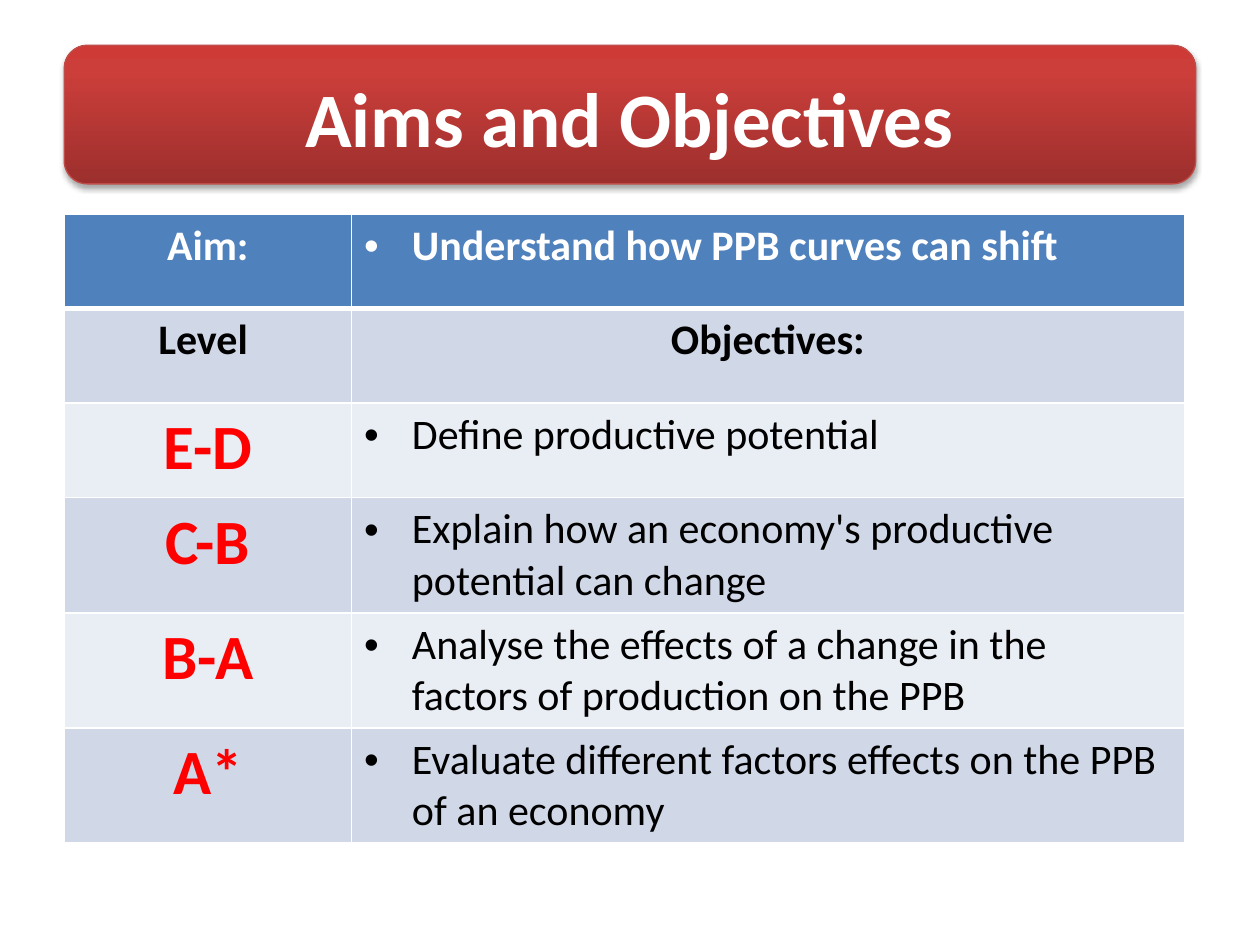
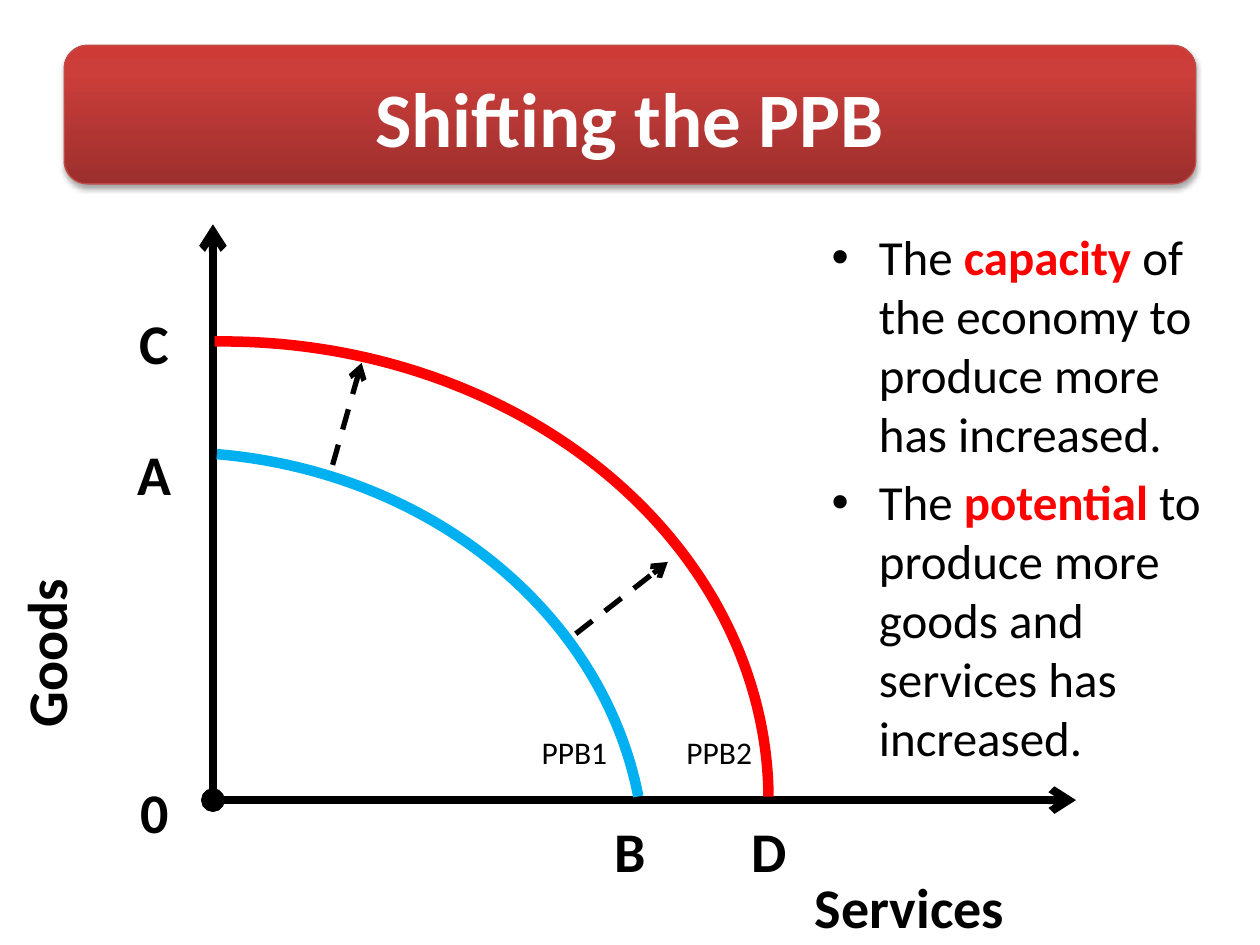
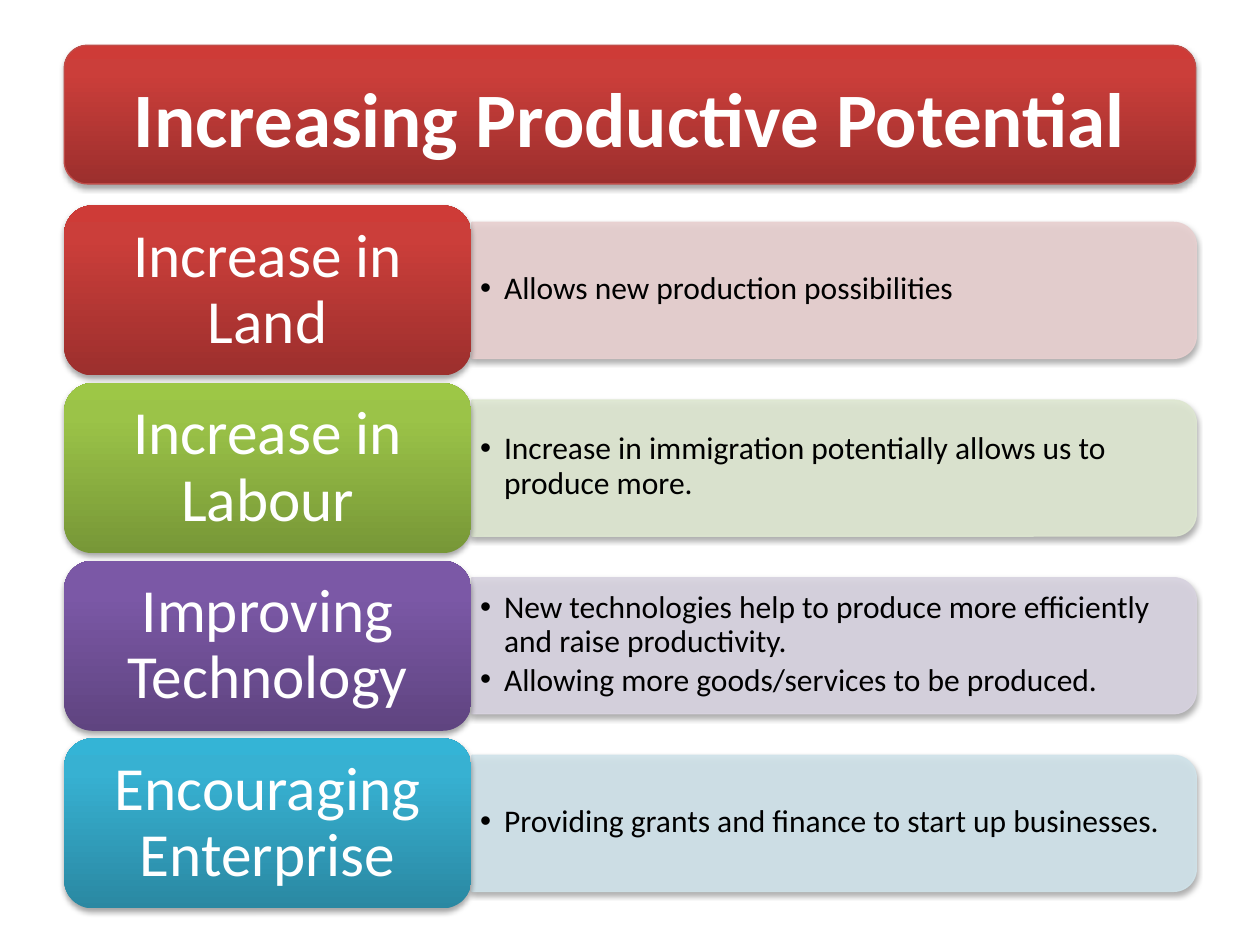
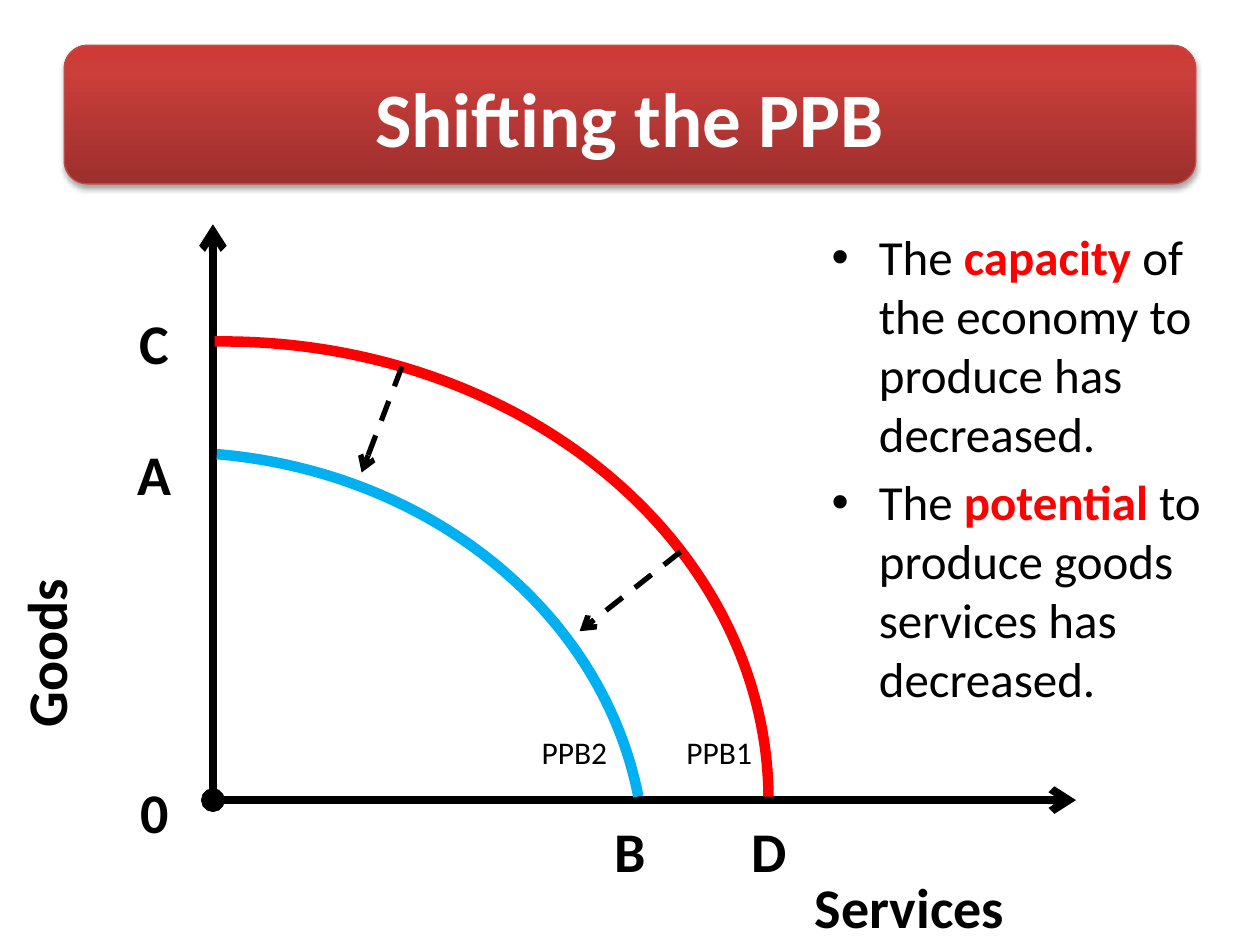
from dataclasses import dataclass
from typing import NamedTuple

from lxml.etree import SubElement
from pptx import Presentation
from pptx.dml.color import RGBColor
from pptx.enum.dml import MSO_LINE
from pptx.enum.shapes import MSO_CONNECTOR, MSO_SHAPE as Preset
from pptx.enum.text import MSO_ANCHOR as Anchor, MSO_AUTO_SIZE as AutoSize, PP_ALIGN as Align
from pptx.oxml.ns import qn
from pptx.util import Emu, Pt

PX = 9144
FONT = "Calibri"
BLACK, WHITE, RED, CYAN = "000000", "FFFFFF", "FF0000", "00B0F0"
HEADER, BAND_DARK, BAND_LIGHT = "4F81BD", "D0D8E8", "E9EDF4"
RED_STOPS = ("9C2F2D", "CB3E3A", "CE3B37")
RED_EDGE = "BF4C48"
TITLE_ONLY, TITLE_AND_BODY = 5, 1


class Area(NamedTuple):
    left: int
    top: int
    width: int
    height: int


class Arrow(NamedTuple):
    start: tuple[int, int]
    end: tuple[int, int]


class Curve(NamedTuple):
    area: Area
    angles: tuple[float, float]
    shade: str


class Label(NamedTuple):
    text: str
    area: Area
    align: Align = Align.CENTER
    vertical: bool = False


class Level(NamedTuple):
    name: str
    objective: str


@dataclass
class Factor:
    heading: str
    points: list[str]
    stops: tuple[str, str, str]
    tint: str


@dataclass
class Shift:
    points: list[str]
    inner: str
    outer: str
    arrows: list[Arrow]


BAND = Area(51, 36, 898, 110)
TITLE = Area(50, 30, 900, 125)
BODY = Area(650, 175, 331, 422)
TABLE = Area(51, 170, 889, 450)
COLUMNS = (228, 661)

ORIGIN = (169, 635)
AXES = [Arrow((169, 178), ORIGIN), Arrow((854, 635), ORIGIN)]
OUTER_CURVE = Curve(Area(-256, 271, 866, 728), (161.37, 215.78), RED)
INNER_CURVE = Curve(Area(-239, 359, 751, 657), (165.73, 210.9), CYAN)
LABELS = [
    Label("Goods", Area(4, 233, 63, 354), Align.LEFT, True),
    Label("Services", Area(413, 674, 394, 91), Align.RIGHT),
    Label("C", Area(91, 240, 63, 63)),
    Label("A", Area(91, 344, 63, 63)),
    Label("0", Area(91, 612, 63, 63)),
    Label("B", Area(469, 643, 63, 63)),
    Label("D", Area(579, 643, 63, 63)),
]

AIM = "Understand how PPB curves can shift"
LEVELS = [
    Level("E-D", "Define productive potential"),
    Level("C-B", "Explain how an economy's productive potential can change"),
    Level("B-A", "Analyse the effects of a change in the factors of production on the PPB"),
    Level("A*", "Evaluate different factors effects on the PPB of an economy"),
]

FACTORS = [
    Factor("Increase in Land", ["Allows new production possibilities"], RED_STOPS, "E8D0D0"),
    Factor(
        "Increase in Labour",
        ["Increase in immigration potentially allows us to produce more."],
        ("779737", "9BC348", "9DC746"),
        "DEE7D1",
    ),
    Factor(
        "Improving Technology",
        [
            "New technologies help to produce more efficiently and raise productivity.",
            "Allowing more goods/services to be produced.",
        ],
        ("5F4480", "7B58A6", "7C57A8"),
        "D8D3E0",
    ),
    Factor(
        "Encouraging Enterprise",
        ["Providing grants and finance to start up businesses."],
        ("2A88A2", "37B1D2", "34B4D6"),
        "D0E3EA",
    ),
]
FACTOR_TOP, FACTOR_PITCH = 163, 141

INCREASE = Shift(
    [
        "The |capacity| of the economy to produce more has increased.",
        "The |potential| to produce more goods and services has increased.",
    ],
    "PPB1",
    "PPB2",
    [Arrow((264, 369), (287, 288)), Arrow((457, 503), (530, 446))],
)
DECREASE = Shift(
    [
        "The |capacity| of the economy to produce has decreased.",
        "The |potential| to produce goods services has decreased.",
    ],
    "PPB2",
    "PPB1",
    [Arrow((319, 291), (287, 375)), Arrow((540, 438), (460, 501))],
)


def px(length: int) -> Emu:
    return Emu(length * PX)


def emu(lengths) -> list[Emu]:
    return [px(length) for length in lengths]


def colour(code: str) -> RGBColor:
    return RGBColor.from_string(code)


def place(shape, area: Area) -> None:
    shape.left, shape.top, shape.width, shape.height = emu(area)


def add_bullet(para, indent: int) -> None:
    props = para._p.get_or_add_pPr()
    props.set("marL", str(px(indent)))
    props.set("indent", str(-px(indent)))
    SubElement(props, qn("a:buFont"), typeface="Arial")
    SubElement(props, qn("a:buChar"), char="•")


def write(frame, texts, *, size, shade=BLACK, bold=False, align=None, bullet=0,
          spacing=None, after=None, anchor=None, insets=None) -> None:
    frame.word_wrap = True
    if anchor is not None:
        frame.vertical_anchor = anchor
    if insets:
        side, end = emu(insets)
        frame.margin_left = frame.margin_right = side
        frame.margin_top = frame.margin_bottom = end
    for index, text in enumerate(texts):
        para = frame.add_paragraph() if index else frame.paragraphs[0]
        if align is not None:
            para.alignment = align
        if spacing:
            para.line_spacing = spacing
        if after is not None:
            para.space_after = Pt(after)
        if bullet:
            add_bullet(para, bullet)
        for part, words in enumerate(text.split("|")):
            marked = part % 2 == 1
            span = para.add_run()
            span.text = words
            span.font.name = FONT
            span.font.size = Pt(size)
            span.font.bold = bold or marked
            span.font.color.rgb = colour(RED if marked else shade)


def add_text(page, area: Area, texts, **style):
    box = page.shapes.add_textbox(*emu(area))
    write(box.text_frame, texts, **style)
    return box


def add_preset(page, preset, area: Area, *, fill=None, line=None, width=0.75):
    shape = page.shapes.add_shape(preset, *emu(area))
    shape.shadow.inherit = False
    if fill:
        shape.fill.solid()
        shape.fill.fore_color.rgb = colour(fill)
    else:
        shape.fill.background()
    if line:
        shape.line.color.rgb = colour(line)
        shape.line.width = Pt(width)
    else:
        shape.line.fill.background()
    return shape


def set_gradient(shape, stops) -> None:
    shape.fill.gradient()
    shape.fill.gradient_angle = 90
    stop_list = shape.element.spPr.find(".//" + qn("a:gsLst"))
    for stop in list(stop_list):
        stop_list.remove(stop)
    for position, code in zip((0, 80, 100), stops):
        stop = SubElement(stop_list, qn("a:gs"), pos=str(position * 1000))
        SubElement(stop, qn("a:srgbClr"), val=code)


def set_opacity(shape, percent: int) -> None:
    for code in list(shape.element.spPr.iter(qn("a:srgbClr"))):
        SubElement(code, qn("a:alpha"), val=str(percent * 1000))


def add_shadow(shape) -> None:
    effects = shape.element.spPr.find(qn("a:effectLst"))
    shadow = SubElement(effects, qn("a:outerShdw"), blurRad="40000", dist="23000",
                        dir="5400000", rotWithShape="0")
    code = SubElement(shadow, qn("a:srgbClr"), val=BLACK)
    SubElement(code, qn("a:alpha"), val="35000")


def add_line(page, arrow: Arrow, *, width, head=None, tail=None, dashed=False) -> None:
    line = page.shapes.add_connector(MSO_CONNECTOR.STRAIGHT, *emu(arrow.start + arrow.end))
    line.line.color.rgb = colour(BLACK)
    line.line.width = Pt(width)
    if dashed:
        line.line.dash_style = MSO_LINE.DASH
    props = line.element.spPr
    stroke = props.find(qn("a:ln"))
    for tag, kind in (("a:headEnd", head), ("a:tailEnd", tail)):
        if kind:
            SubElement(stroke, qn(tag), type=kind)
    SubElement(props, qn("a:effectLst"))


def add_page(deck, title: str, layout: int = TITLE_ONLY):
    page = deck.slides.add_slide(deck.slide_layouts[layout])
    band = add_preset(page, Preset.ROUNDED_RECTANGLE, BAND, line=RED_EDGE)
    set_gradient(band, RED_STOPS)
    add_shadow(band)
    heading = page.shapes.title
    heading.element.addprevious(band.element)
    place(heading, TITLE)
    write(heading.text_frame, [title], size=44, shade=WHITE, bold=True,
          align=Align.CENTER, anchor=Anchor.MIDDLE)
    return page


def fill_cell(cell, text: str, fill: str, top: int, bottom: int, **style) -> None:
    props = cell._tc.get_or_add_tcPr()
    for tag, width in (("a:lnL", 1), ("a:lnR", 1), ("a:lnT", top), ("a:lnB", bottom)):
        border = SubElement(props, qn(tag), w=str(Pt(width)))
        SubElement(SubElement(border, qn("a:solidFill")), qn("a:srgbClr"), val=WHITE)
    cell.fill.solid()
    cell.fill.fore_color.rgb = colour(fill)
    write(cell.text_frame, [text], **style)


def build_objectives(deck) -> None:
    page = add_page(deck, "Aims and Objectives")
    centred = dict(align=Align.CENTER, bold=True)
    rows = [
        (("Aim:", dict(centred, size=24, shade=WHITE)),
         (AIM, dict(size=24, shade=WHITE, bold=True, bullet=38))),
        (("Level ", dict(centred, size=24)), ("Objectives:", dict(centred, size=24))),
    ]
    for level in LEVELS:
        rows.append(((level.name, dict(centred, size=36, shade=RED)),
                     (level.objective, dict(size=24, bullet=38))))
    table = page.shapes.add_table(len(rows), len(COLUMNS), *emu(TABLE)).table
    for column, width in zip(table.columns, COLUMNS):
        column.width = px(width)
    for index, row in enumerate(rows):
        fill = HEADER if index == 0 else (BAND_LIGHT, BAND_DARK)[index % 2]
        top, bottom = 3 if index == 1 else 1, 3 if index == 0 else 1
        for column, (text, style) in enumerate(row):
            fill_cell(table.cell(index, column), text, fill, top, bottom, **style)


def add_curve(page, curve: Curve) -> None:
    arc = add_preset(page, Preset.ARC, curve.area, line=curve.shade, width=6)
    for index, angle in enumerate(curve.angles):
        arc.adjustments[index] = angle


def add_label(page, label: Label) -> None:
    box = add_text(page, label.area, [label.text], size=32, bold=True,
                   align=label.align, anchor=Anchor.MIDDLE)
    if label.vertical:
        box.element.find(".//" + qn("a:bodyPr")).set("vert", "vert270")


def build_shift(deck, shift: Shift) -> None:
    page = add_page(deck, "Shifting the PPB", TITLE_AND_BODY)
    body = page.placeholders[1]
    place(body, BODY)
    write(body.text_frame, shift.points, size=28)
    body.text_frame.auto_size = AutoSize.NONE
    for axis in AXES:
        add_line(page, axis, width=4.5, head="arrow", tail="oval")
    add_curve(page, OUTER_CURVE)
    for label in LABELS:
        add_label(page, label)
    add_curve(page, INNER_CURVE)
    for left, name in ((420, shift.inner), (535, shift.outer)):
        add_text(page, Area(left, 577, 110, 40), [name], size=18)
    for arrow in shift.arrows:
        add_line(page, arrow, width=3, tail="arrow", dashed=True)


def add_factor(page, factor: Factor, top: int) -> None:
    panel = add_preset(page, Preset.ROUND_2_SAME_RECTANGLE, Area(608, top - 220, 108, 575),
                       fill=factor.tint, line=factor.tint)
    panel.rotation = 90
    set_opacity(panel, 90)
    add_shadow(panel)
    add_text(page, Area(374, top + 18, 569, 97), factor.points, size=18, bullet=19,
             spacing=0.9, after=2.7, anchor=Anchor.MIDDLE, insets=(7, 4))
    tile = add_preset(page, Preset.ROUNDED_RECTANGLE, Area(51, top, 323, 135))
    set_gradient(tile, factor.stops)
    add_shadow(tile)
    write(tile.text_frame, [factor.heading], size=35, shade=WHITE, align=Align.CENTER,
          spacing=0.9, after=12, anchor=Anchor.MIDDLE, insets=(15, 7))


def build_factors(deck) -> None:
    page = add_page(deck, "Increasing Productive Potential")
    for index, factor in enumerate(FACTORS):
        add_factor(page, factor, FACTOR_TOP + index * FACTOR_PITCH)


def main() -> None:
    deck = Presentation()
    deck.slide_width, deck.slide_height = px(1000), px(750)
    build_objectives(deck)
    build_shift(deck, INCREASE)
    build_factors(deck)
    build_shift(deck, DECREASE)
    deck.save("out.pptx")


if __name__ == "__main__":
    main()
